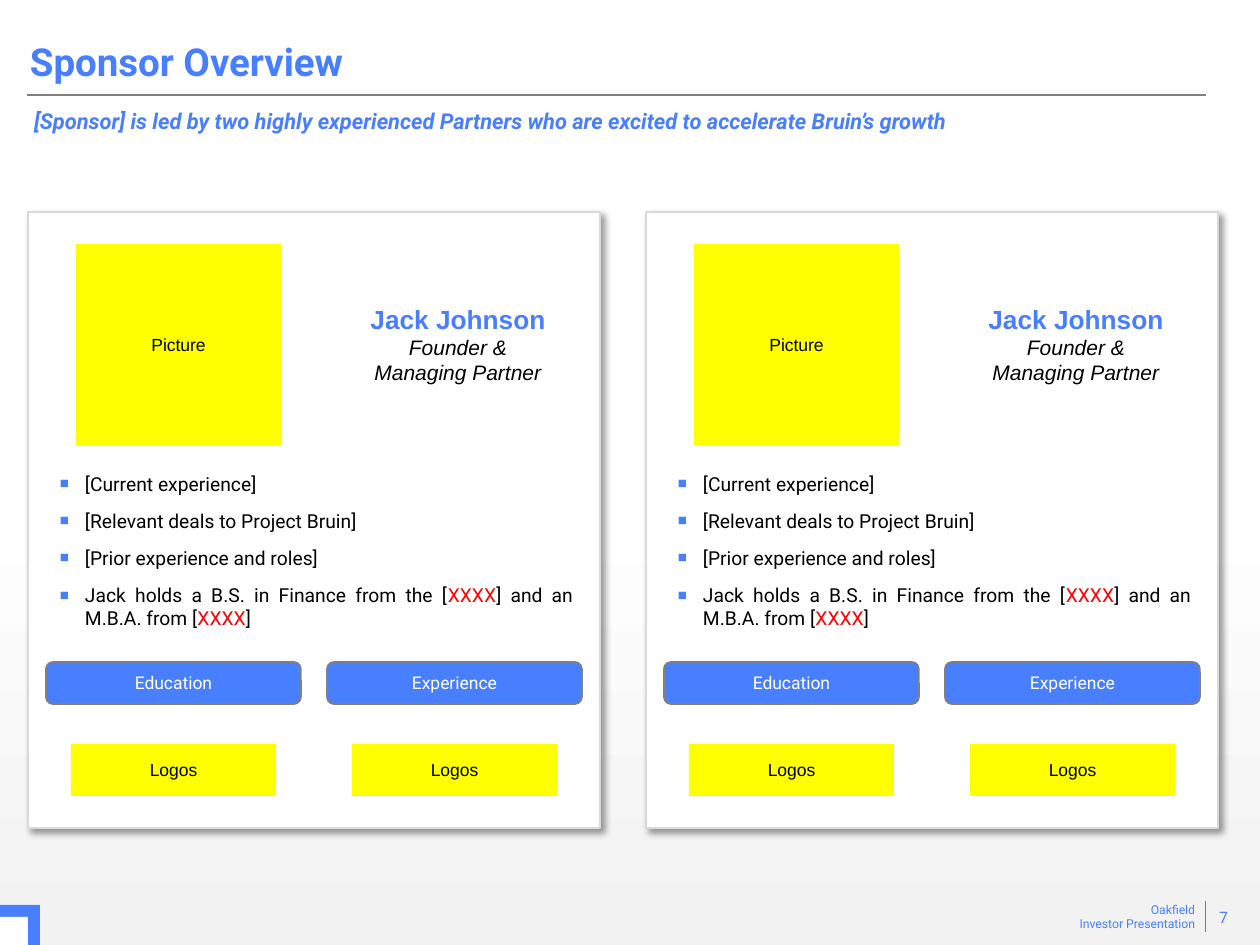
from lxml import etree
from pptx import Presentation
from pptx import util as u
from pptx.dml.color import RGBColor
from pptx.enum import shapes, text
from pptx.oxml import parse_xml
from pptx.oxml.ns import nsdecls, qn

TITLE = "Sponsor Overview"
SUBTITLE = "[Sponsor] is led by two highly experienced Partners who are excited to accelerate Bruin’s growth"
FOOTER = ["Oakfield", "Investor Presentation"]
PAGE_NUMBER = "7"
BIOGRAPHY = [
    ["[Current experience]"],
    ["[Relevant deals to Project Bruin]"],
    ["[Prior experience and roles]"],
    ["Jack holds a B.S. in Finance from the [", "XXXX", "] and an M.B.A. from [", "XXXX", "]"],
]
PARTNERS = [("Jack Johnson", "Founder & Managing Partner", BIOGRAPHY)] * 2
SECTIONS = [("Education", "Logos"), ("Experience", "Logos")]

BLUE, GRAY, YELLOW = "487FFE", "808080", "FFFF00"
BLACK, WHITE, RED, BORDER = "000000", "FFFFFF", "FF0000", "D9D9D9"
CARD_LEFT, CARD_TOP, CARD_W, CARD_H, CARD_STEP = 28, 212, 572, 616, 618
SECTION_STEP = 281
ALIGN, ANCHOR, SHAPE = text.PP_ALIGN, text.MSO_ANCHOR, shapes.MSO_SHAPE


def px(n):
    return u.Emu(round(n * 914400 / 126))


def rgb(color):
    return RGBColor.from_string(color)


def style(paragraph, size, color, font="Roboto", bold=False, italic=False, align=ALIGN.LEFT):
    paragraph.alignment = align
    for run in paragraph.runs:
        run.font.size = u.Pt(size)
        run.font.name = font
        run.font.bold = bold
        run.font.italic = italic
        run.font.color.rgb = rgb(color)


def set_frame(frame, anchor, insets):
    frame.word_wrap = True
    frame.vertical_anchor = anchor
    frame.margin_left, frame.margin_top, frame.margin_right, frame.margin_bottom = map(px, insets)


def add_text(box, lines, anchor=ANCHOR.TOP, insets=(13, 6, 13, 6), **look):
    frame = slide.shapes.add_textbox(*map(px, box)).text_frame
    set_frame(frame, anchor, insets)
    frame.text = "\n".join(lines)
    for paragraph in frame.paragraphs:
        style(paragraph, **look)
    return frame


def add_block(box, fill, line=None, kind=SHAPE.RECTANGLE):
    block = slide.shapes.add_shape(kind, *map(px, box))
    block.shadow.inherit = False
    block.fill.solid()
    block.fill.fore_color.rgb = rgb(fill)
    if line:
        block.line.color.rgb = rgb(line)
        block.line.width = u.Pt(1)
    else:
        block.line.fill.background()
    return block


def add_label(box, label, fill, insets=(13, 6, 13, 6), line=None, kind=SHAPE.RECTANGLE, **look):
    frame = add_block(box, fill, line, kind).text_frame
    set_frame(frame, ANCHOR.MIDDLE, insets)
    frame.text = label
    style(frame.paragraphs[0], size=10, align=ALIGN.CENTER, **look)


def add_rule(x1, y1, x2, y2, color, width):
    rule = slide.shapes.add_connector(shapes.MSO_CONNECTOR.STRAIGHT, *map(px, (x1, y1, x2, y2)))
    rule.line.color.rgb = rgb(color)
    rule.line.width = u.Pt(width)
    etree.SubElement(rule._element.spPr, qn("a:effectLst"))


def drop_shadow(card):
    card._element.spPr.find(qn("a:effectLst")).append(parse_xml(
        f'<a:outerShdw {nsdecls("a")} blurRad="50800" dist="38100" dir="2700000" algn="tl" rotWithShape="0">'
        f'<a:srgbClr val="{BLACK}"><a:alpha val="40000"/></a:srgbClr></a:outerShdw>'))


def add_bullet(paragraph):
    props = paragraph._p.get_or_add_pPr()
    props.set("marL", str(px(26)))
    props.set("indent", str(-px(25)))
    color = etree.SubElement(props, qn("a:buClr"))
    etree.SubElement(color, qn("a:srgbClr"), val=BLUE)
    etree.SubElement(props, qn("a:buSzPct"), val="79000")
    etree.SubElement(props, qn("a:buFont"), typeface="Arial")
    etree.SubElement(props, qn("a:buChar"), char="■")


def add_biography(box, items):
    frame = slide.shapes.add_textbox(*map(px, box)).text_frame
    set_frame(frame, ANCHOR.TOP, (0, 1, 0, 0))
    for i, pieces in enumerate(items):
        paragraph = frame.add_paragraph() if i else frame.paragraphs[0]
        for piece in pieces:
            paragraph.add_run().text = piece
        style(paragraph, 11, BLACK, align=ALIGN.JUSTIFY)
        for run in paragraph.runs:
            if run.text == "XXXX":
                run.font.color.rgb = rgb(RED)
        paragraph.space_before = paragraph.space_after = u.Pt(4)
        add_bullet(paragraph)


def add_partner(left, name, role, biography):
    drop_shadow(add_block((left, CARD_TOP, CARD_W, CARD_H), WHITE, BORDER))
    heading = add_text((left + 331, 302, 192, 84), [name, role], insets=(0, 1, 0, 0),
                       size=15, color=BLUE, font="Arial", bold=True, align=ALIGN.CENTER)
    style(heading.paragraphs[1], 12, BLACK, "Arial", italic=True, align=ALIGN.CENTER)
    for paragraph in heading.paragraphs:
        paragraph._p.get_or_add_pPr().set("marL", str(px(6)))
    add_biography((left + 31, 471, 514, 161), biography)
    add_label((left + 48, 244, 205, 201), "Picture", YELLOW, color=BLACK, font="Arial")
    for i, (section, logos) in enumerate(SECTIONS):
        x = left + i * SECTION_STEP
        add_label((x + 18, 662, 255, 42), section, BLUE, (3, 6, 3, 6), GRAY,
                  SHAPE.ROUNDED_RECTANGLE, color=WHITE)
        add_label((x + 43, 744, 205, 52), logos, YELLOW, color=BLACK, font="Arial")


prs = Presentation()
prs.slide_width, prs.slide_height = px(1260), px(945)
slide = prs.slides.add_slide(prs.slide_layouts[6])

backdrop = slide.background.fill
backdrop.gradient()
backdrop.gradient_angle = 270
for stop, position, color in zip(backdrop.gradient_stops, (0.53, 1), (WHITE, "F2F2F2")):
    stop.position = position
    stop.color.rgb = rgb(color)

add_text((1062, 896, 146, 43), FOOTER, size=7, color=BLUE, align=ALIGN.RIGHT)
add_rule(1205, 901, 1205, 932, BLUE, 0.5)
add_rule(27, 95, 1206, 95, GRAY, 1.5)
add_block((0, 905, 40, 40), BLUE)
add_block((0, 917, 28, 28), WHITE)
title = add_text((17, 32, 993, 59), [TITLE], ANCHOR.BOTTOM, size=22, color=BLUE, bold=True)
title.paragraphs[0].line_spacing = 0.9
add_text((1147, 902, 94, 30), [PAGE_NUMBER], ANCHOR.MIDDLE, size=9, color=BLUE, align=ALIGN.RIGHT)
add_text((30, 108, 1189, 62), [SUBTITLE], insets=(4, 0, 0, 0),
         size=12.5, color=BLUE, bold=True, italic=True)
for i, partner in enumerate(PARTNERS):
    add_partner(CARD_LEFT + i * CARD_STEP, *partner)

prs.save("out.pptx")
